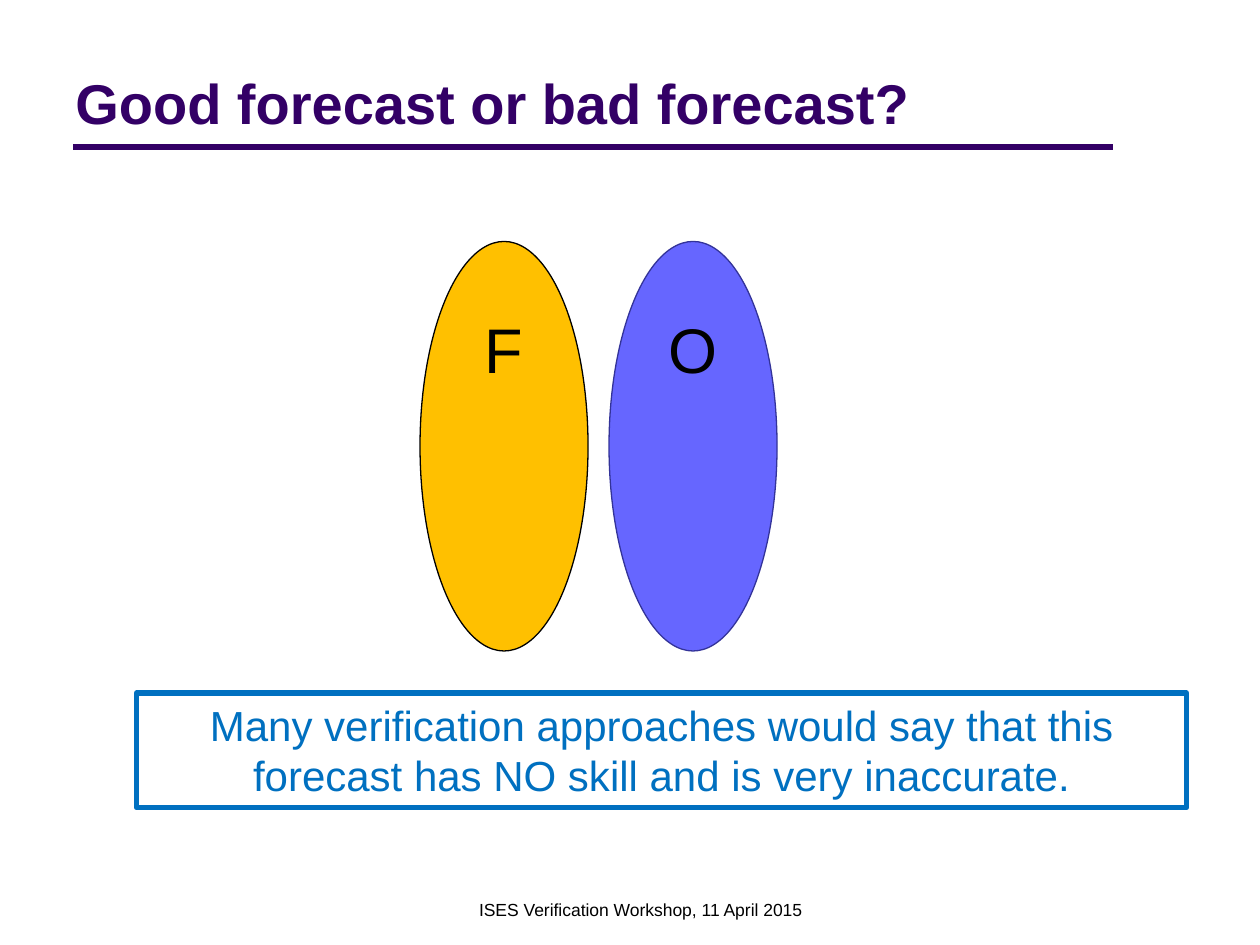
from dataclasses import dataclass

import pptx
import pptx.dml.color
import pptx.enum.shapes
import pptx.enum.text
import pptx.util
from lxml import etree

Pt = pptx.util.Pt
ALIGN = pptx.enum.text.PP_ALIGN
ANCHOR = pptx.enum.text.MSO_ANCHOR
SHAPE = pptx.enum.shapes.MSO_SHAPE
CONNECTOR = pptx.enum.shapes.MSO_CONNECTOR
PURPLE, BLUE, BLACK = "330066", "0070C0", "000000"


@dataclass
class Field:
    label: str
    left: float
    fill: str
    line: str
    label_width: float


FIELDS = [
    Field("F", 240, "FFC000", BLACK, 36),
    Field("O", 348, "6666FF", "333399", 48),
]
FIELD_TOP, FIELD_WIDTH, FIELD_HEIGHT = 138, 96, 234
LABEL_TOP, LABEL_HEIGHT = 174, 50.4


def rgb(color: str):
    return pptx.dml.color.RGBColor.from_string(color)


def set_line(line, color: str, width: float) -> None:
    line.color.rgb = rgb(color)
    line.width = Pt(width)


def add_text(shapes, text: str, box: tuple, size: float, color: str,
             align=ALIGN.CENTER, anchor=ANCHOR.TOP, bold: bool = False):
    sp = shapes.add_textbox(*map(Pt, box))
    tf = sp.text_frame
    tf.word_wrap = True
    tf.vertical_anchor = anchor
    p = tf.paragraphs[0]
    p.alignment = align
    r = p.add_run()
    r.text = text
    r.font.color.rgb = rgb(color)
    for name, value in {"name": "Arial", "size": Pt(size), "bold": bold}.items():
        setattr(r.font, name, value)
    return sp


def add_rule(shapes, left: float, right: float, y: float) -> None:
    cxn = shapes.add_connector(CONNECTOR.STRAIGHT, Pt(left), Pt(y), Pt(right), Pt(y))
    set_line(cxn.line, PURPLE, 3)
    etree.SubElement(cxn.line._get_or_add_ln().getparent(),
                     pptx.oxml.ns.qn("a:effectLst"))


def add_field(shapes, field: Field) -> None:
    """Draw an ellipse grouped with its label, centred across it."""
    group = shapes.add_group_shape().shapes
    sp = group.add_shape(SHAPE.OVAL, Pt(field.left), Pt(FIELD_TOP),
                         Pt(FIELD_WIDTH), Pt(FIELD_HEIGHT))
    sp.shadow.inherit = False
    sp.fill.solid()
    sp.fill.fore_color.rgb = rgb(field.fill)
    set_line(sp.line, field.line, 0.75)
    left = field.left + (FIELD_WIDTH - field.label_width) / 2
    add_text(group, field.label, (left, LABEL_TOP, field.label_width, LABEL_HEIGHT),
             36, BLACK)


def main() -> None:
    prs = pptx.Presentation()
    prs.slide_width, prs.slide_height = Pt(720), Pt(540)
    s = prs.slides.add_slide(prs.slide_layouts[6])

    add_rule(s.shapes, 42, 636, 84)
    add_text(s.shapes, "Good forecast or bad forecast?", (36, 0, 648, 81),
             32, PURPLE, ALIGN.LEFT, ANCHOR.BOTTOM, True)
    for field in FIELDS:
        add_field(s.shapes, field)
    message = add_text(
        s.shapes,
        "Many verification approaches would say that this "
        "forecast has NO skill and is very inaccurate.",
        (78, 396, 600, 65.5), 24, BLUE)
    set_line(message.line, BLUE, 3)
    add_text(s.shapes, "ISES Verification Workshop, 11 April 2015",
             (144, 510, 444, 18), 10, BLACK)
    prs.save("out.pptx")


if __name__ == "__main__":
    main()
